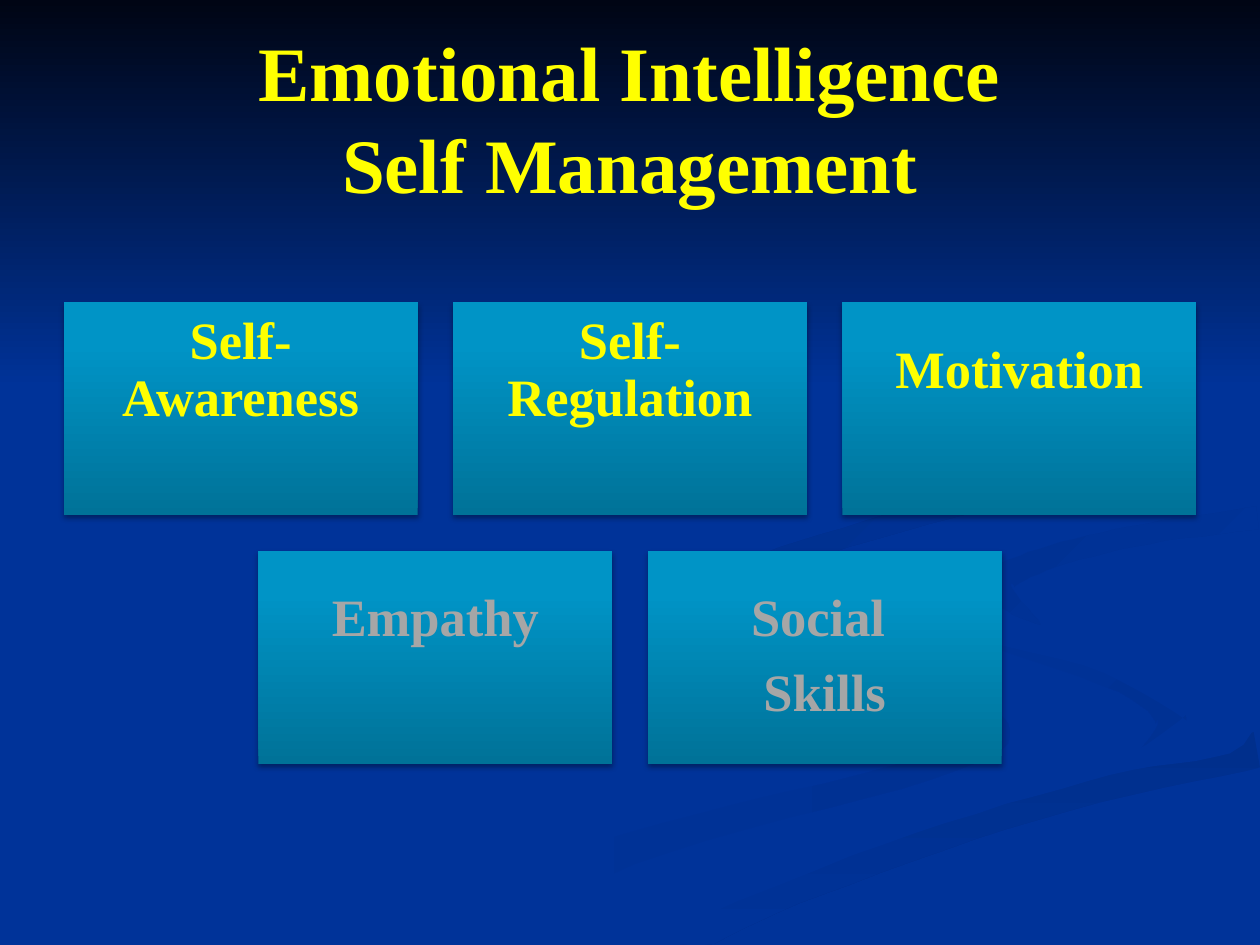
import math
from collections import namedtuple
from itertools import pairwise

from lxml import etree
from pptx import Presentation
from pptx import util as u
from pptx.dml.color import RGBColor
from pptx.enum import shapes, text
from pptx.oxml.ns import qn

SCALE = 9144
WIDTH, HEIGHT = 1000, 750
CARD_WIDTH, CARD_HEIGHT, CARD_GAP = 281, 169, 28
FIRST_ROW_TOP = 240
CARD_INSET, RAISED_INSET = 12, 72
STEPS = 8
FONT = "Times New Roman"
BLUE = RGBColor(0x00, 0x33, 0x99)
NIGHT = RGBColor(0x00, 0x05, 0x14)
SHADE = RGBColor(0x00, 0x2F, 0x8C)
DIM = RGBColor(0x00, 0x31, 0x93)
TEAL = RGBColor(0x00, 0x72, 0x98)
CYAN = RGBColor(0x00, 0x94, 0xC6)
YELLOW = RGBColor(0xFF, 0xFF, 0x00)
GRAY = RGBColor(0xA6, 0xA6, 0xA6)
DOWNWARD, UPWARD, DIAGONAL, ACROSS = 270, 90, 315, 0

Knot = namedtuple("Knot", "x y thickness")
Ribbon = namedtuple("Ribbon", "start end angle knots")

RIBBONS = {
    "outer loop": Ribbon(BLUE, DIM, ACROSS, [
        (572, 461, 2), (577, 478, 6), (690, 523, 6), (793, 576, 14),
        (735, 610, 18), (499, 674, 26), (330, 749, 50)]),
    "inner curl": Ribbon(BLUE, DIM, DIAGONAL, [
        (724, 464, 1), (745, 494, 6), (890, 544, 12), (930, 574, 25), (900, 603, 2)]),
    "dark streak": Ribbon(SHADE, BLUE, DOWNWARD, [
        (998, 595, 28), (820, 641, 20), (630, 706, 24), (537, 749, 28)]),
    "broad band": Ribbon(BLUE, BLUE, ACROSS, [
        (999, 394, 15), (851, 418, 18), (753, 464, 56), (880, 524, 22),
        (971, 566, 56), (880, 611, 8), (700, 663, 14), (490, 749, 12)]),
    "upper streak": Ribbon(DIM, BLUE, DIAGONAL, [
        (998, 411, 18), (898, 426, 16), (820, 447, 19), (793, 467, 22), (826, 496, 2)]),
    "top curl": Ribbon(SHADE, BLUE, DIAGONAL, [
        (762, 233, 1), (850, 278, 5), (891, 335, 5), (878, 369, 14),
        (690, 421, 16), (585, 462, 16), (622, 500, 1)]),
}

CARD_ROWS = [
    (YELLOW, ["Self-Awareness", "Self-Regulation", "Motivation"]),
    (GRAY, ["Empathy", "Social \nSkills"]),
]


def blend(before, start, end, after, t):
    """Return the Catmull-Rom value at t between start and end."""
    return start + t / 2 * (end - before + t * (
        2 * before - 5 * start + 4 * end - after + t * (3 * (start - end) + after - before)))


def smooth(knots):
    """Return a smooth centre line through the knots."""
    padded = [knots[0], *knots, knots[-1]]
    line = [Knot(*(blend(*values, step / STEPS) for values in zip(*padded[i:i + 4])))
            for i in range(len(knots) - 1) for step in range(STEPS)]
    return line + [Knot(*knots[-1])]


def outline(knots):
    """Return the two edges of a ribbon as one loop kept within the slide."""
    left, right = [], []
    for here, ahead in pairwise(smooth(knots)):
        direction = math.atan2(ahead.y - here.y, ahead.x - here.x)
        for edge, side in ((left, 0.5), (right, -0.5)):
            x = here.x - side * here.thickness * math.sin(direction)
            y = here.y + side * here.thickness * math.cos(direction)
            edge.append((min(round(x), WIDTH), min(round(y), HEIGHT)))
    tip = knots[-1][:2]
    return left + [tip] + right[::-1]


def write(frame, words, size, color, **paragraph_format):
    """Fill a text frame with centred bold text."""
    frame.word_wrap = True
    frame.vertical_anchor = text.MSO_ANCHOR.MIDDLE
    frame.text = words
    for para in frame.paragraphs:
        para.alignment = text.PP_ALIGN.CENTER
        for name, value in paragraph_format.items():
            setattr(para, name, value)
        for span in para.runs:
            span.font.name, span.font.size = FONT, u.Pt(size)
            span.font.bold, span.font.color.rgb = True, color


class Painter:
    """Hold the deck style and the current slide."""

    def __init__(self, deck):
        self.slide = deck.slides.add_slide(deck.slide_layouts[6])
        self.slide.background.fill.solid()
        self.slide.background.fill.fore_color.rgb = BLUE

    def lengths(self, *pixels):
        return [u.Emu(round(pixel * SCALE)) for pixel in pixels]

    def paint(self, shape, start, end, angle, reach=1):
        shape.shadow.inherit = False
        shape.line.fill.background()
        shape.fill.gradient()
        shape.fill.gradient_angle = angle
        for stop, color, position in zip(shape.fill.gradient_stops, (start, end), (0, reach)):
            stop.color.rgb, stop.position = color, position

    def ribbon(self, ribbon):
        first, *others = outline(ribbon.knots)
        builder = self.slide.shapes.build_freeform(*first, scale=SCALE)
        builder.add_line_segments(others, close=True)
        self.paint(builder.convert_to_shape(), ribbon.start, ribbon.end, ribbon.angle)

    def rectangle(self, place, start, end, angle, reach=1):
        box = self.slide.shapes.add_shape(shapes.MSO_SHAPE.RECTANGLE, *self.lengths(*place))
        self.paint(box, start, end, angle, reach)
        return box

    def title(self, words, place):
        box = self.slide.shapes.add_textbox(*self.lengths(*place))
        write(box.text_frame, words, 44, YELLOW)

    def shadow(self, box):
        effects = box._element.spPr.find(qn("a:effectLst"))
        shadow = etree.SubElement(effects, qn("a:outerShdw"), blurRad="39370",
                                  dist="22860", dir="5400000", rotWithShape="0")
        black = etree.SubElement(shadow, qn("a:srgbClr"), val="000000")
        etree.SubElement(black, qn("a:alpha"), val="35000")

    def card(self, words, left, top, color):
        box = self.rectangle((left, top, CARD_WIDTH, CARD_HEIGHT), TEAL, CYAN, UPWARD, 0.8)
        self.shadow(box)
        frame = box.text_frame
        bottom = CARD_INSET if "\n" in words else RAISED_INSET
        frame.margin_left, frame.margin_right, frame.margin_top, frame.margin_bottom = (
            self.lengths(CARD_INSET, CARD_INSET, CARD_INSET, bottom))
        write(frame, words, 30, color, line_spacing=0.9, space_after=u.Pt(10.5))

    def card_row(self, row, color, labels):
        pitch = CARD_WIDTH + CARD_GAP
        left = (WIDTH - len(labels) * pitch + CARD_GAP) / 2
        top = FIRST_ROW_TOP + row * (CARD_HEIGHT + CARD_GAP)
        for column, words in enumerate(labels):
            self.card(words, left + column * pitch, top, color)


def main():
    deck = Presentation()
    deck.slide_width, deck.slide_height = u.Emu(WIDTH * SCALE), u.Emu(HEIGHT * SCALE)
    painter = Painter(deck)
    for ribbon in RIBBONS.values():
        painter.ribbon(ribbon)
    painter.rectangle((0, 0, WIDTH, 308), NIGHT, BLUE, DOWNWARD)
    painter.title("Emotional Intelligence\vSelf Management", (50, 30, 900, 125))
    for row, (color, labels) in enumerate(CARD_ROWS):
        painter.card_row(row, color, labels)
    deck.save("out.pptx")


if __name__ == "__main__":
    main()
